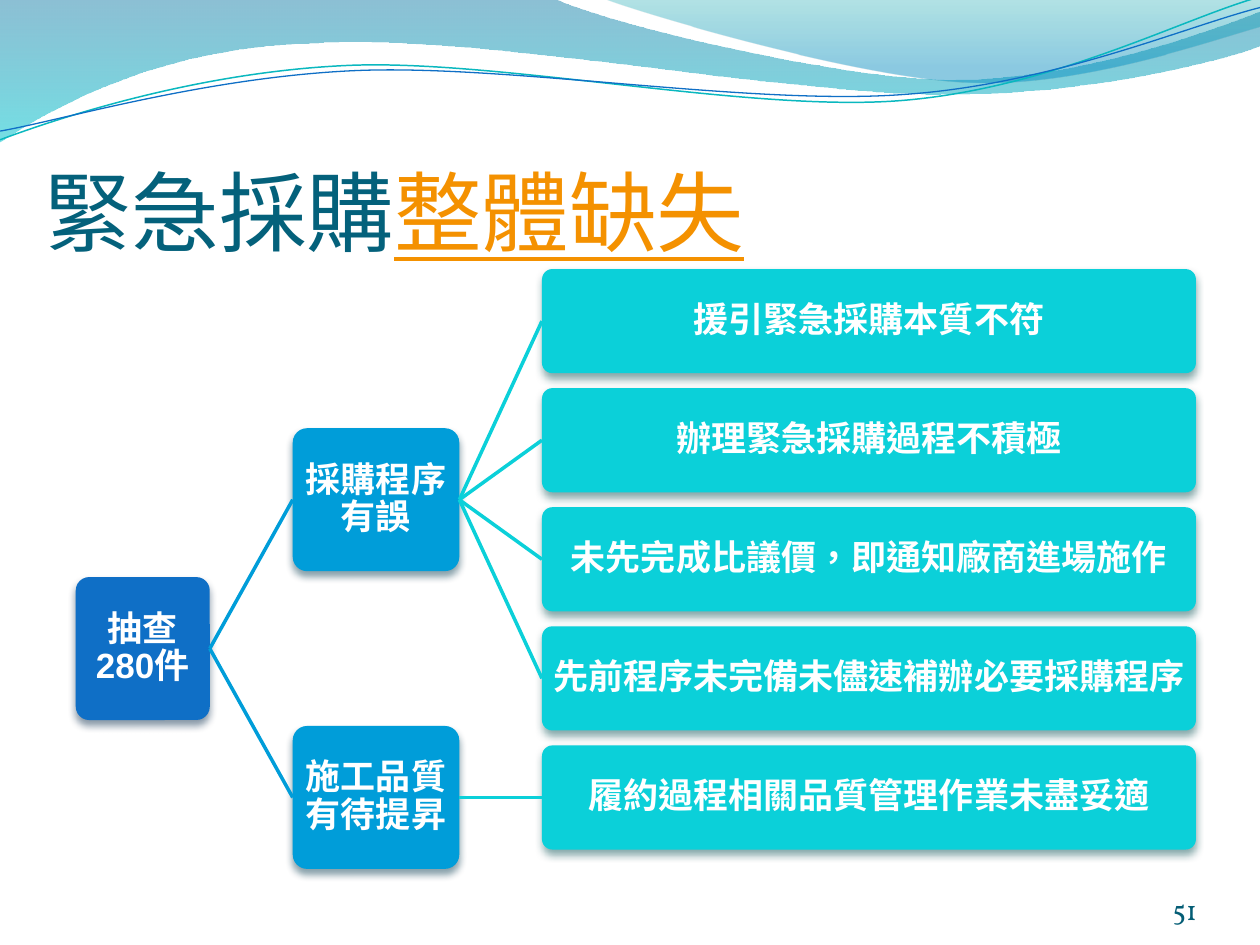
from lxml import etree
from pptx import Presentation
from pptx.dml.color import RGBColor
from pptx.enum.lang import MSO_LANGUAGE_ID as LANG
from pptx.enum.shapes import MSO_CONNECTOR as CONN, MSO_SHAPE as SHAPE
from pptx.enum.text import MSO_ANCHOR as ANCHOR, PP_ALIGN as ALIGN
from pptx.oxml import parse_xml
from pptx.oxml.ns import nsdecls, qn
from pptx.util import Pt

COLORS = {
    "title": "04617B", "accent": "F49100", "number": "045D75", "white": "FFFFFF",
    "root": "0F6FC6", "group": "009DD9", "item": "0BD0D9",
    "root_shadow": "042747", "group_shadow": "00374C", "item_shadow": "024B4E",
    "teal_line": "0AB8BF", "blue_line": "0F6FC6",
}
RGB = {name: RGBColor.from_string(value) for name, value in COLORS.items()}

prs = Presentation()
prs.slide_width, prs.slide_height = Pt(720), Pt(540)
slide = prs.slides.add_slide(prs.slide_layouts[6])
sp = slide.shapes


def add_curve(start, segments, close):
    """Draw an outline of lines (2 numbers) and Bezier curves (6 numbers)."""
    fb = sp.build_freeform(Pt(start[0]), Pt(start[1]))
    fb.add_line_segments([(Pt(seg[-2]), Pt(seg[-1])) for seg in segments], close=close)
    s = fb.convert_to_shape()
    s.shadow.inherit = False
    # Turn the straight segments with control points into Bezier curves
    for line, seg in zip(list(s._element.iter(qn("a:lnTo"))), segments):
        if len(seg) == 6:
            line.tag = qn("a:cubicBezTo")
            for i in (2, 0):
                pt = etree.Element(qn("a:pt"), x=str(Pt(seg[i]) - s.left),
                                   y=str(Pt(seg[i + 1]) - s.top))
                line.insert(0, pt)
    return s


def add_node(text, kind, left, center, width, height):
    s = sp.add_shape(SHAPE.ROUNDED_RECTANGLE, Pt(left), Pt(center - height / 2),
                     Pt(width), Pt(height))
    s.adjustments[0] = 0.1
    s.fill.solid()
    s.fill.fore_color.rgb = RGB[kind]
    s.line.fill.background()
    s.shadow.inherit = False
    s._element.spPr.find(qn("a:effectLst")).append(parse_xml(
        f'<a:outerShdw {nsdecls("a")} blurRad="{Pt(4.5)}" dist="{Pt(3)}" dir="5400000" '
        f'rotWithShape="0"><a:srgbClr val="{COLORS[kind + "_shadow"]}">'
        '<a:alpha val="48000"/></a:srgbClr></a:outerShdw>'))
    tf = s.text_frame
    tf.word_wrap = True
    tf.vertical_anchor = ANCHOR.MIDDLE
    tf.margin_left = tf.margin_right = tf.margin_top = tf.margin_bottom = Pt(3)
    p = tf.paragraphs[0]
    p.text = text
    p.runs[0].font.language_id = LANG.TRADITIONAL_CHINESE
    p.alignment = ALIGN.CENTER
    p.line_spacing = 0.9
    p.font.name, p.font.size, p.font.bold = "Arial", Pt(20), True
    p.font.color.rgb = RGB["white"]
    return s


# Translucent waves: start, segments, gradient stops (position, colour, opacity)
waves = [
    ((0, 0), [(316.8, -0.7), (342.7, 12.2, 478.1, 45.4, 545.8, 45.4),
              (614.2, 45.4, 689.8, 18.7, 720, 6.5), (720.7, 25.9),
              (707.8, 31.7, 626.4, 54.7, 537.1, 54), (447.8, 54, 275, 20.2, 185, 24.5),
              (92.9, 25.9, 33.1, 59.8, -0.7, 81.4)],
     [(0, "0074A1", 45), (100, "00C6CF", 55)]),
    ((344.9, -0.7), [(366.5, 7.9, 491, 44.6, 553.7, 46.8),
                     (616.3, 49.7, 691.9, 23, 720, 15.1), (720, 0)],
     [(0, "00A1A9", 30), (80, "008BBF", 45)]),
]
for start, segments, stops in waves:
    s = add_curve(start, segments, True)
    s.line.fill.background()
    stop_xml = "".join(
        f'<a:gs pos="{pos * 1000}"><a:srgbClr val="{color}">'
        f'<a:alpha val="{alpha * 1000}"/></a:srgbClr></a:gs>' for pos, color, alpha in stops)
    s._element.spPr.find(qn("a:custGeom")).addnext(parse_xml(
        f'<a:gradFill {nsdecls("a")}><a:gsLst>{stop_xml}</a:gsLst>'
        '<a:lin ang="5400000" scaled="0"/></a:gradFill>'))

# Thin wave lines
wave_lines = [
    ((0, 79.9), [(34.6, 67, 113.8, 41, 199.4, 37.4), (284.4, 33.8, 427, 64.1, 513.4, 57.6),
                 (599.8, 51.1, 675.4, 10.8, 718.6, -1.4)], "teal_line", 0.85),
    ((0, 74.9), [(33.8, 69.1, 118.1, 43.9, 203.8, 40.3), (290.2, 36.7, 429.8, 60.5, 516.2, 54),
                 (601.9, 48.2, 677.5, 15.1, 720, 4.3)], "blue_line", 0.75),
]
for start, segments, color, weight in wave_lines:
    s = add_curve(start, segments, False)
    s.fill.background()
    s.line.color.rgb = RGB[color]
    s.line.width = Pt(weight)

# Title and slide number
texts = [
    ((25.2, 60.5, 648, 90), 3.6, ALIGN.LEFT, "Calibri", 50,
     [("緊急採購", "title"), ("整體缺失", "accent")]),
    ((624.2, 500.4, 59.8, 28.8), 0, ALIGN.RIGHT, "Vollkorn", 16, [("51", "number")]),
]
for box, top_margin, align, font, size, runs in texts:
    tf = sp.add_textbox(*map(Pt, box)).text_frame
    tf.word_wrap = True
    tf.vertical_anchor = ANCHOR.BOTTOM
    tf.margin_left = tf.margin_right = tf.margin_bottom = 0
    tf.margin_top = Pt(top_margin)
    p = tf.paragraphs[0]
    p.alignment = align
    p.font.name, p.font.size = font, Pt(size)
    for text, color in runs:
        r = p.add_run()
        r.text = text
        r.font.language_id = LANG.TRADITIONAL_CHINESE
        r.font.color.rgb = RGB[color]
        if color == "accent":
            r.font.underline = True

# Tree: every parent sits at the mean height of its children
groups = [
    ("採購程序有誤", ["援引緊急採購本質不符", "辦理緊急採購過程不積極",
                "未先完成比議價，即通知廠商進場施作", "先前程序未完備未儘速補辦必要採購程序"]),
    ("施工品質有待提昇", ["履約過程相關品質管理作業未盡妥適"]),
]
FIRST_ROW, ROW_STEP = 183.5, 68.05
links, group_nodes, group_centers, row = [], [], [], 0
for name, items in groups:
    centers = [FIRST_ROW + ROW_STEP * (row + i) for i in range(len(items))]
    row += len(items)
    center = sum(centers) / len(centers)
    group = add_node(name, "group", 167.3, center, 95.2, 81.7)
    group_nodes.append(group)
    group_centers.append(center)
    for text, y in zip(items, centers):
        links.append((group, add_node(text, "item", 309.7, y, 373.7, 59.5), "item"))
root_center = sum(group_centers) / len(group_centers)
root = add_node("抽查280件", "root", 43.3, root_center, 76.6, 81.7)
links += [(root, group, "group") for group in group_nodes]

# Branches from the right side of a parent to the left side of a child
for parent, child, color in links:
    c = sp.add_connector(CONN.STRAIGHT, 0, 0, 0, 0)
    c.begin_connect(parent, 3)
    c.end_connect(child, 1)
    c.line.color.rgb = RGB[color]
    c.line.width = Pt(2)
    etree.SubElement(c._element.spPr, qn("a:effectLst"))

prs.save("out.pptx")
